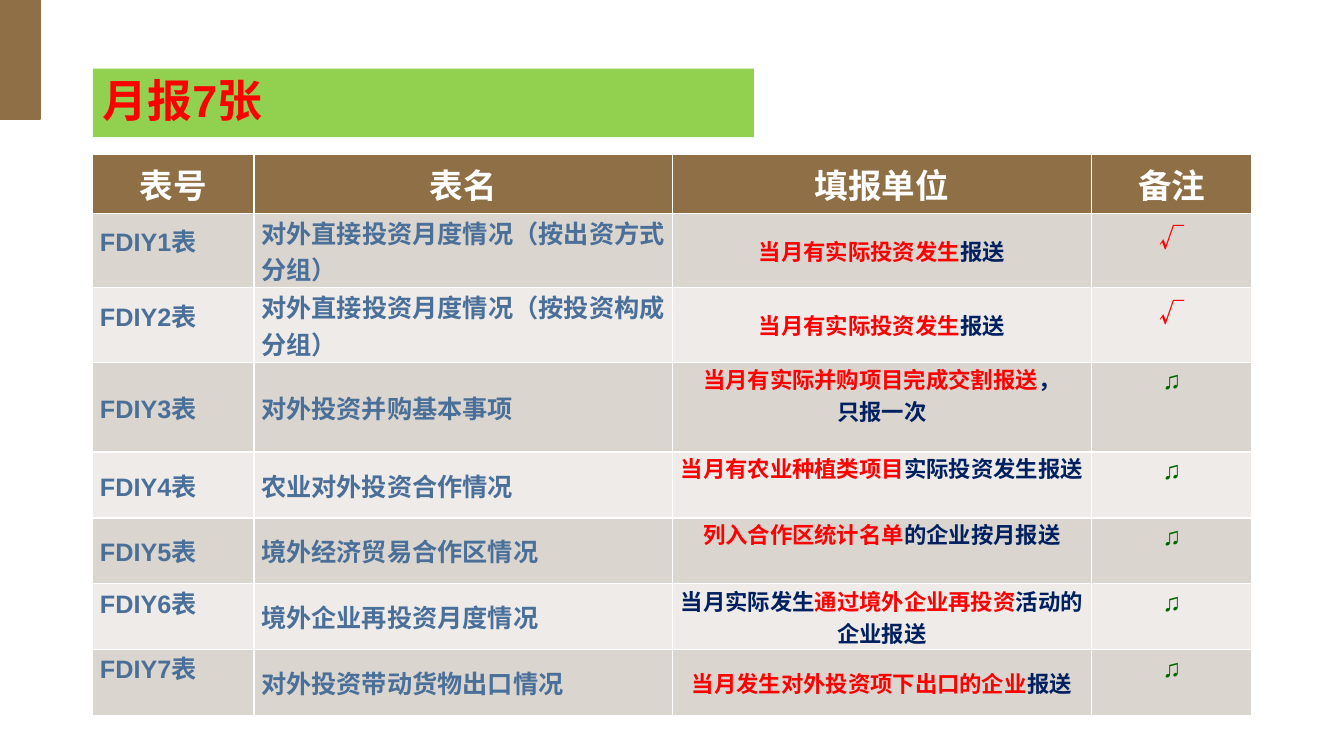
from pptx import Presentation
from pptx.dml.color import RGBColor
from pptx.enum.shapes import MSO_SHAPE
from pptx.enum.text import MSO_ANCHOR, PP_ALIGN
from pptx.util import Cm, Pt

COLORS = {
    "brown": "8F7046", "green": "92D050", "red": "FF0000", "white": "FFFFFF",
    "blue": "4A6F99", "navy": "002060", "dark_green": "006600",
    "odd_row": "DBD5CF", "even_row": "EEEBE9",
}
SANS, SERIF, CJK = "Arial", "Times New Roman", "Noto Sans CJK SC"
TOP, MIDDLE = MSO_ANCHOR.TOP, MSO_ANCHOR.MIDDLE


def color(name):
    return RGBColor.from_string(COLORS[name])


def write(para, spans, size, font, align):
    """Fill a paragraph with (text, colour) spans."""
    para.alignment = align
    para.font.size, para.font.name, para.font.bold = Pt(size), font, True
    for text, tint in spans:
        span = para.add_run()
        span.text = text
        span.font.color.rgb = color(tint)


deck = Presentation()
deck.slide_width, deck.slide_height = Cm(33.87), Cm(19.05)
page = deck.slides.add_slide(deck.slide_layouts[6])

# Corner block
corner = page.shapes.add_shape(MSO_SHAPE.RECTANGLE, Cm(-0.03), 0, Cm(1.04), Cm(3))
corner.shadow.inherit = False
corner.fill.solid()
corner.fill.fore_color.rgb = color("brown")
corner.line.color.rgb = color("brown")
corner.line.width = Pt(1)

# Table content: name, name font, reporting lines, mark, mark font, code anchor, unit anchor
reports = [
    ("对外直接投资月度情况（按出资方式分组）", SANS,
     [[("当月有实际投资发生", "red"), ("报送", "navy")]], "√", CJK, MIDDLE, MIDDLE),
    ("对外直接投资月度情况（按投资构成分组）", SANS,
     [[("当月有实际投资发生", "red"), ("报送", "navy")]], "√", CJK, MIDDLE, MIDDLE),
    ("对外投资并购基本事项", SANS,
     [[("当月有实际并购项目完成交割报送", "red"), ("，", "navy")], [("只报一次", "navy")]],
     "♫", SERIF, MIDDLE, TOP),
    ("农业对外投资合作情况", SANS,
     [[("当月有农业种植类项目", "red"), ("实际投资发生报送", "navy")]], "♫", SERIF, MIDDLE, TOP),
    ("境外经济贸易合作区情况", CJK,
     [[("列入合作区统计名单", "red"), ("的企业按月报送", "navy")]], "♫", SERIF, MIDDLE, TOP),
    ("境外企业再投资月度情况", CJK,
     [[("当月实际发生", "navy"), ("通过境外企业再投资", "red"), ("活动的企业报送", "navy")]],
     "♫", SERIF, TOP, MIDDLE),
    ("对外投资带动货物出口情况", CJK,
     [[("当月发生对外投资项下出口的企业", "red"), ("报送", "navy")]], "♫", SERIF, TOP, MIDDLE),
]
headings = ["表号", "表名", "填报单位", "备注"]
widths = [4.06, 10.54, 10.57, 4.04]
heights = [1.46, 1.88, 1.88, 2.26] + [1.66] * 4

# Table grid
table = page.shapes.add_table(len(heights), len(widths), Cm(2.34), Cm(3.89),
                              Cm(sum(widths)), Cm(sum(heights))).table
for column, width in zip(table.columns, widths):
    column.width = Cm(width)
for row, height in zip(table.rows, heights):
    row.height = Cm(height)

# Header row
for cell, heading in zip(table.rows[0].cells, headings):
    cell.fill.solid()
    cell.fill.fore_color.rgb = color("brown")
    write(cell.text_frame.paragraphs[0], [(heading, "white")], 24, SANS, PP_ALIGN.CENTER)

# Report rows
for number, report in enumerate(reports, start=1):
    name, name_font, unit_lines, mark, mark_font, code_anchor, unit_anchor = report
    cells = list(table.rows[number].cells)
    for cell in cells:
        cell.fill.solid()
        cell.fill.fore_color.rgb = color("odd_row" if number % 2 else "even_row")
    for cell, anchor in zip(cells[:3], (code_anchor, MIDDLE, unit_anchor)):
        cell.vertical_anchor = anchor
        cell.margin_left = cell.margin_right = Cm(0.18)
        cell.margin_top = cell.margin_bottom = 0

    code, title, unit, note = [cell.text_frame for cell in cells]
    write(code.paragraphs[0], [(f"FDIY{number}表", "blue")], 18, SANS, PP_ALIGN.LEFT)
    if number <= 2:
        code.paragraphs[0].line_spacing = Pt(12)
    write(title.paragraphs[0], [(name, "blue")], 18, name_font, PP_ALIGN.JUSTIFY)
    for index, spans in enumerate(unit_lines):
        para = unit.add_paragraph() if index else unit.paragraphs[0]
        write(para, spans, 16, SERIF, PP_ALIGN.CENTER)
    mark_color = "red" if mark == "√" else "dark_green"
    write(note.paragraphs[0], [(mark, mark_color)], 18, mark_font, PP_ALIGN.CENTER)

# Title bar
box = page.shapes.add_shape(MSO_SHAPE.RECTANGLE, Cm(2.34), Cm(1.73), Cm(16.66), Cm(1.73))
box.shadow.inherit = False
box.fill.solid()
box.fill.fore_color.rgb = color("green")
box.line.fill.background()
box.text_frame.word_wrap = True
box.text_frame.vertical_anchor = MIDDLE
headline = box.text_frame.paragraphs[0]
write(headline, [("月报7张", "red")], 32, SANS, PP_ALIGN.LEFT)
headline.line_spacing = 0.9

deck.save("out.pptx")
